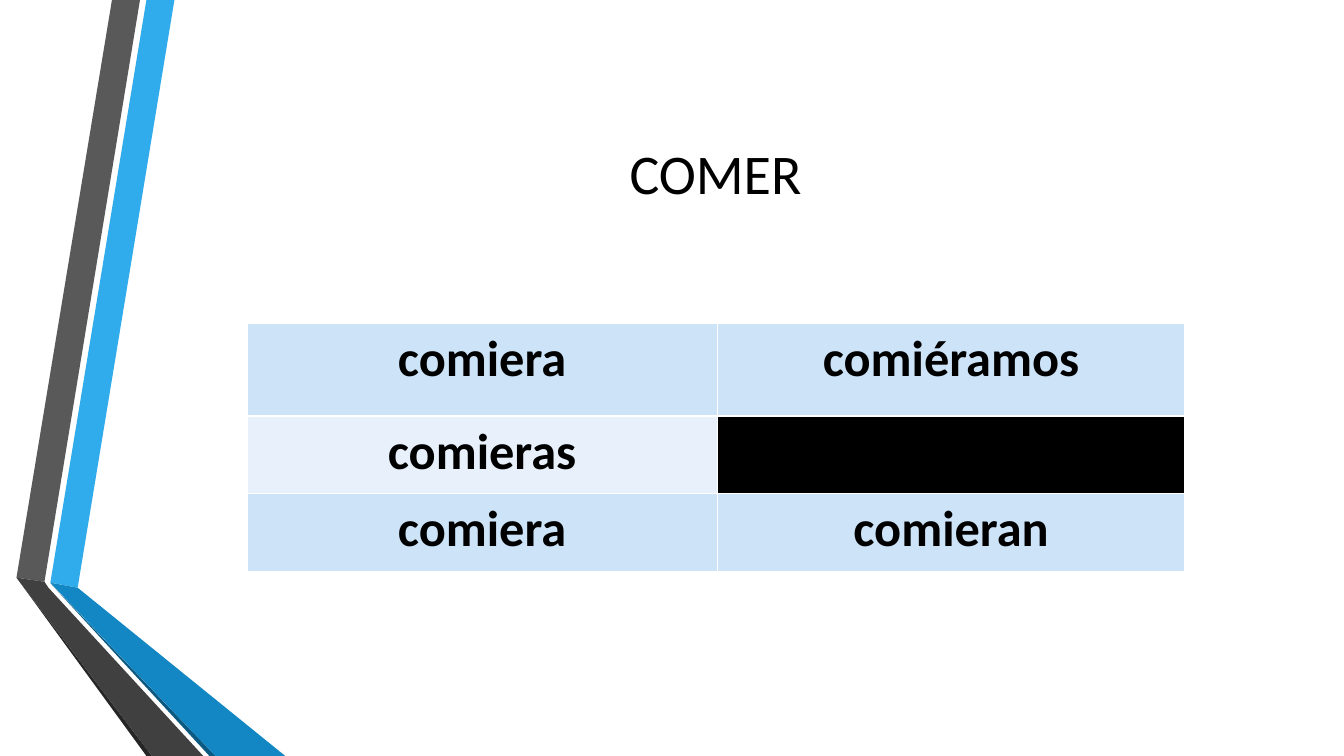
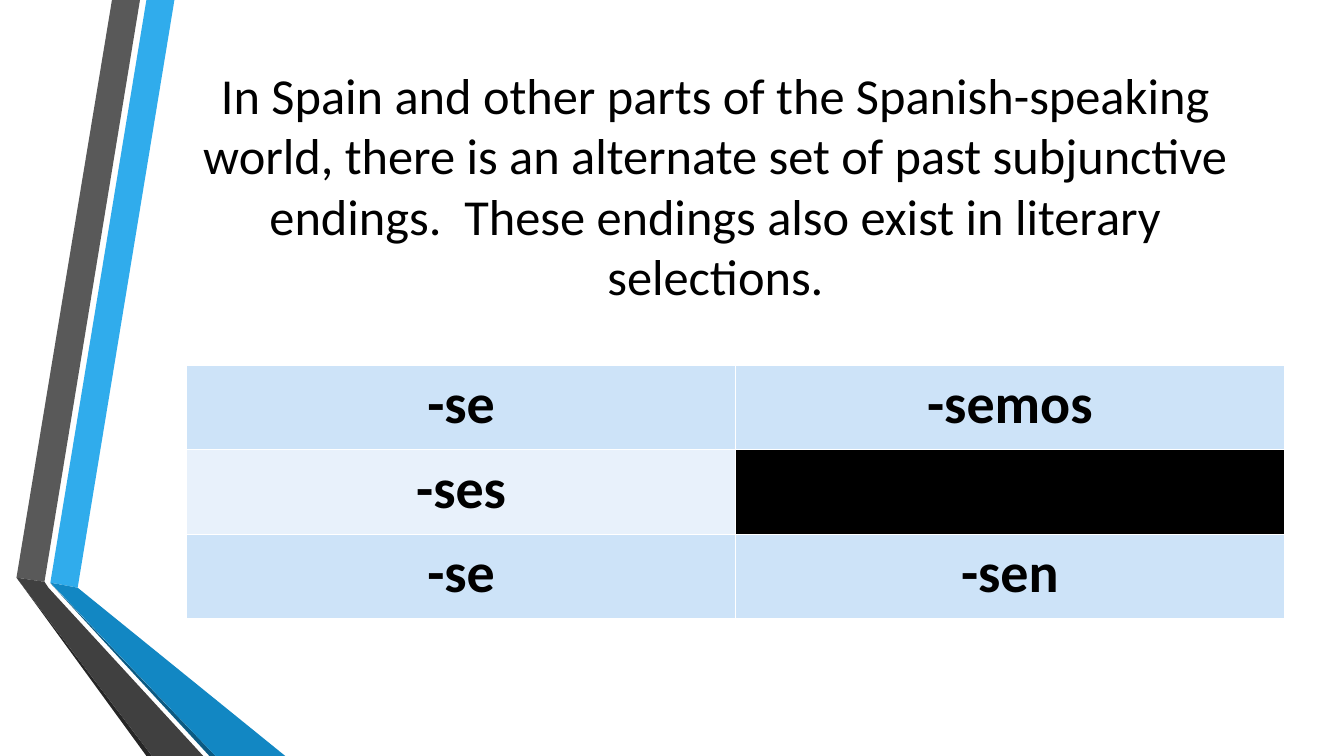
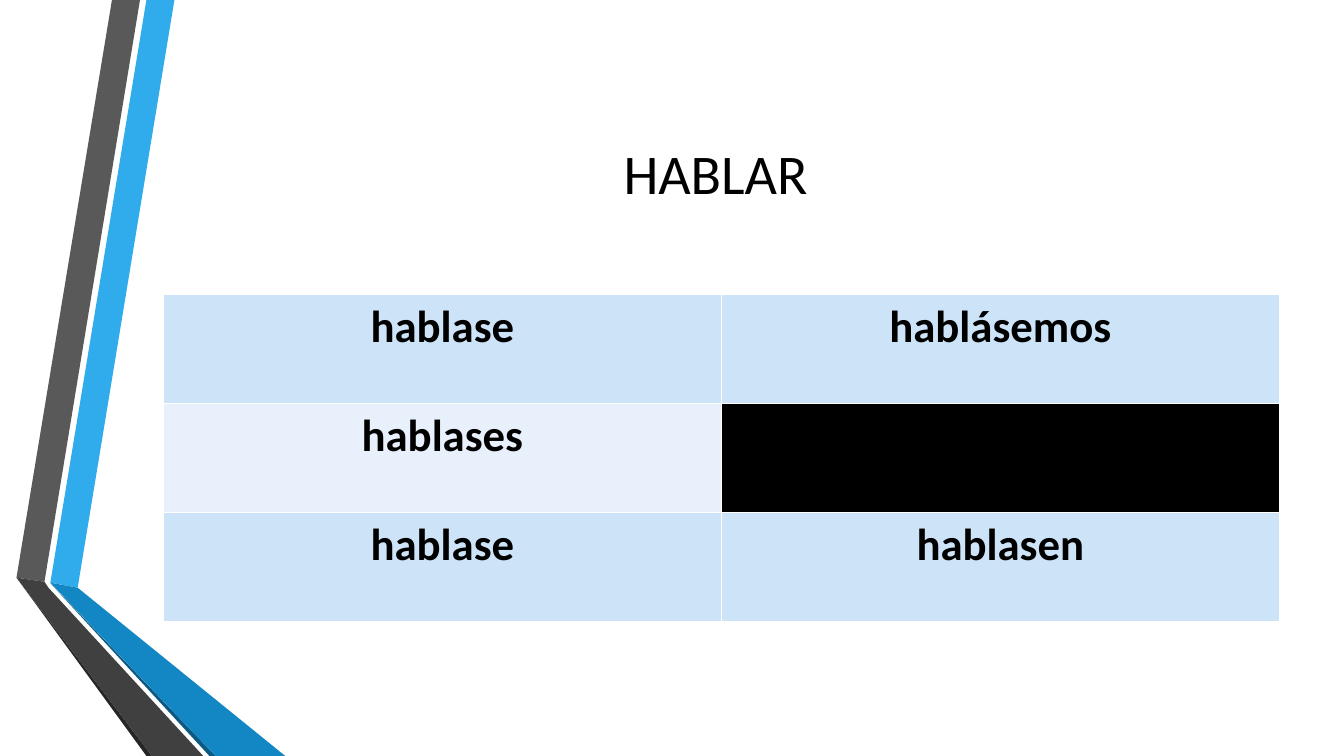
from dataclasses import dataclass

import lxml.etree
import pptx
import pptx.dml.color
import pptx.enum.text
import pptx.oxml.ns
import pptx.util

Pt = pptx.util.Pt
RGBColor = pptx.dml.color.RGBColor
Point = tuple[float, float]

BLACK = RGBColor(0x00, 0x00, 0x00)
WHITE = RGBColor(0xFF, 0xFF, 0xFF)
BLUE = RGBColor(0x30, 0xAC, 0xEC)
BLUE_MID = RGBColor(0x12, 0x87, 0xC3)
BLUE_DARK = RGBColor(0x0C, 0x5A, 0x82)
GREY = RGBColor(0x59, 0x59, 0x59)
GREY_MID = RGBColor(0x40, 0x40, 0x40)
GREY_DARK = RGBColor(0x26, 0x26, 0x26)
ROW_FILLS = (RGBColor(0xCD, 0xE3, 0xF8), RGBColor(0xE8, 0xF1, 0xFB))

FONT = "Calibri"
SLIDE_W, SLIDE_H = 960, 540
TITLE_LEFT, TITLE_TOP, TITLE_W = 116.6, 54, 789


@dataclass(frozen=True)
class Band:
    color: RGBColor
    points: tuple[Point, ...]


@dataclass(frozen=True)
class VerbSlide:
    title: str
    title_size: float
    title_height: float
    left: float
    top: float
    col_widths: tuple[float, float]
    row_heights: tuple[float, float, float]
    text_size: float
    forms: tuple[tuple[str, str], ...]


BANDS = (
    Band(BLUE, ((36, 416.2), (55.5, 419.8), (124.6, 0), (104.6, 0))),
    Band(GREY, ((100, 0), (80, 0), (11.8, 412.6), (31.8, 415.6))),
    Band(GREY_DARK, ((11.8, 412.6), (104.6, SLIDE_H), (108.6, SLIDE_H))),
    Band(BLUE_DARK, ((36, 416.6), (149.6, SLIDE_H), (154, SLIDE_H))),
    Band(BLUE_MID, ((36, 416.2), (154, SLIDE_H), (203.8, SLIDE_H), (55.5, 419.8))),
    Band(GREY_MID, ((11.8, 412.6), (108.6, SLIDE_H), (145.2, SLIDE_H),
                    (34.6, 419.8), (31.8, 415.6))),
)

VERB_SLIDES = (
    VerbSlide("COMER", 40, 138, 176.4, 231.2, (336, 334), (66, 55.4, 55.4), 36,
              (("comiera", "comiéramos"), ("comieras", ""), ("comiera", "comieran"))),
    VerbSlide("In Spain and other parts of the Spanish-speaking world, there is an "
              "alternate set of past subjunctive endings.  These endings also exist "
              "in literary selections.",
              36, 156, 133.4, 261, (392, 392), (60.3,) * 3, 40,
              (("-se", "-semos"), ("-ses", ""), ("-se", "-sen"))),
    VerbSlide("HABLAR", 40, 138, 116.8, 210.4, (398.6, 398.6), (78,) * 3, 32,
              (("hablase", "hablásemos"), ("hablases", ""), ("hablase", "hablasen"))),
)


def add_band(s: pptx.slide.Slide, band: Band) -> None:
    start, *rest = [(Pt(x), Pt(y)) for x, y in band.points]
    builder = s.shapes.build_freeform(*start)
    builder.add_line_segments(rest, close=True)
    shape = builder.convert_to_shape()
    shape.shadow.inherit = False
    shape.fill.solid()
    shape.fill.fore_color.rgb = band.color
    shape.line.fill.background()


def write_centred(tf: pptx.text.text.TextFrame, text: str, size: float,
                  bold: bool = False) -> None:
    p = tf.paragraphs[0]
    p.alignment = pptx.enum.text.PP_ALIGN.CENTER
    r = p.add_run()
    r.text = text
    r.font.name = FONT
    r.font.size = Pt(size)
    r.font.bold = bold
    r.font.color.rgb = BLACK


def add_title(s: pptx.slide.Slide, verb: VerbSlide) -> None:
    tf = s.shapes.add_textbox(Pt(TITLE_LEFT), Pt(TITLE_TOP), Pt(TITLE_W),
                              Pt(verb.title_height)).text_frame
    tf.word_wrap = True
    tf.vertical_anchor = pptx.enum.text.MSO_ANCHOR.MIDDLE
    write_centred(tf, verb.title, verb.title_size)


def set_borders(cell: pptx.table._Cell) -> None:
    """Put a thin white line on all four sides, ahead of the fill as the schema asks."""
    qn = pptx.oxml.ns.qn
    tc_pr = cell._tc.get_or_add_tcPr()
    for i, side in enumerate(("a:lnL", "a:lnR", "a:lnT", "a:lnB")):
        ln = lxml.etree.Element(qn(side), w=str(Pt(1)))
        fill = lxml.etree.SubElement(ln, qn("a:solidFill"))
        lxml.etree.SubElement(fill, qn("a:srgbClr"), val=str(WHITE))
        tc_pr.insert(i, ln)


def add_forms_table(s: pptx.slide.Slide, verb: VerbSlide) -> None:
    """Draw the verb forms; a cell without a form is blacked out."""
    table = s.shapes.add_table(
        len(verb.row_heights), len(verb.col_widths), Pt(verb.left), Pt(verb.top),
        Pt(sum(verb.col_widths)), Pt(sum(verb.row_heights))).table
    table.first_row = table.horz_banding = False
    for col, width in zip(table.columns, verb.col_widths):
        col.width = Pt(width)
    for i, (row, height) in enumerate(zip(table.rows, verb.row_heights)):
        row.height = Pt(height)
        for cell, form in zip(row.cells, verb.forms[i]):
            cell.fill.solid()
            cell.fill.fore_color.rgb = ROW_FILLS[i % 2] if form else BLACK
            set_borders(cell)
            if form:
                write_centred(cell.text_frame, form, verb.text_size, bold=True)


def main() -> None:
    prs = pptx.Presentation()
    prs.slide_width, prs.slide_height = Pt(SLIDE_W), Pt(SLIDE_H)
    for verb in VERB_SLIDES:
        s = prs.slides.add_slide(prs.slide_layouts[6])
        for band in BANDS:
            add_band(s, band)
        add_title(s, verb)
        add_forms_table(s, verb)
    prs.save("out.pptx")


if __name__ == "__main__":
    main()
